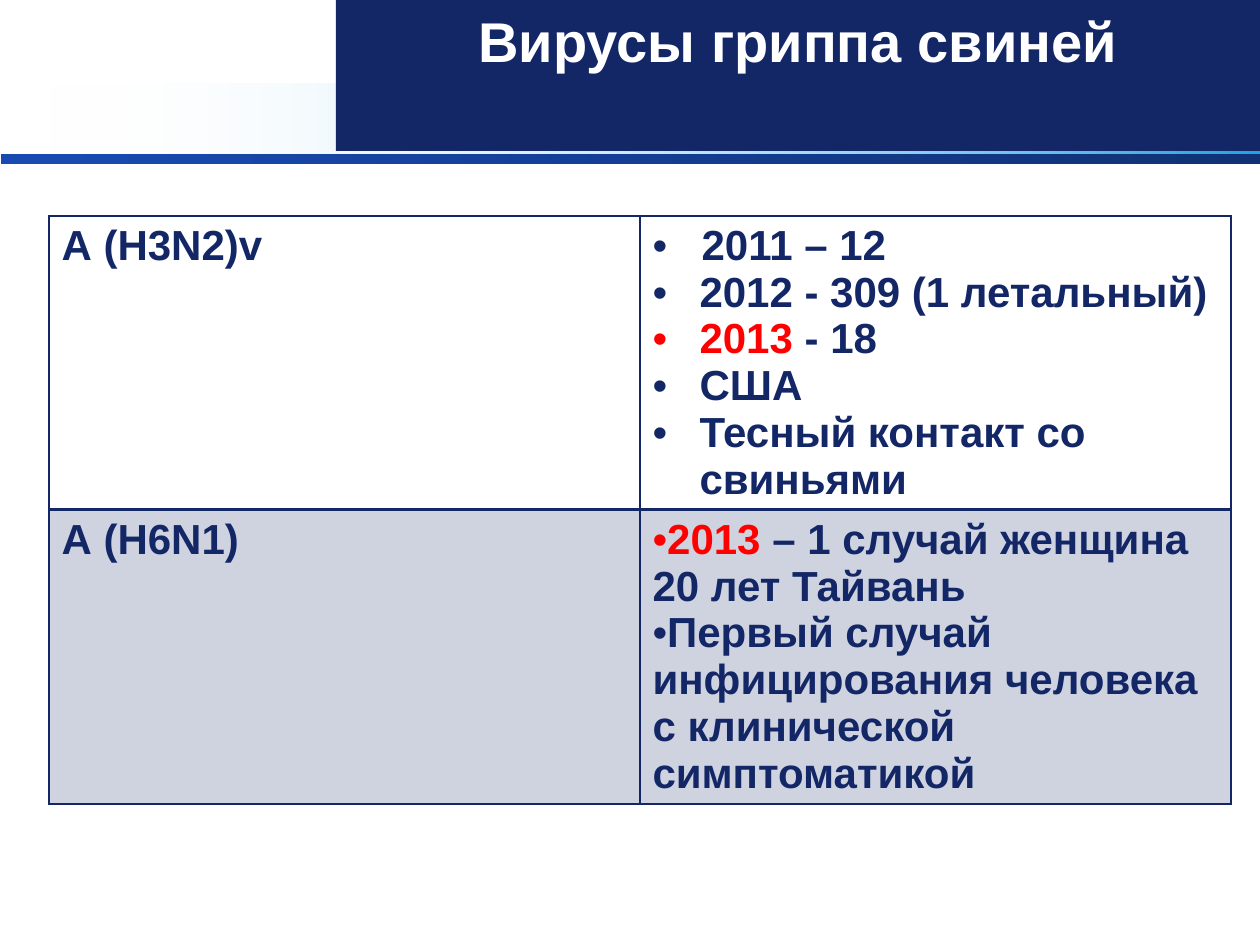
from pptx import Presentation
from pptx.dml.color import RGBColor
from pptx.enum.shapes import MSO_SHAPE
from pptx.enum.text import MSO_ANCHOR, PP_ALIGN
from pptx.oxml import parse_xml
from pptx.oxml.ns import nsdecls, qn
from pptx.util import Emu, Pt

SCALE = 914400 / 126
COLORS = {
    "navy": "132767", "red": "FF0000", "white": "FFFFFF",
    "sky": "22A2E2", "blue": "184BB2", "deep": "103175",
}


def px(size):
    return Emu(round(size * SCALE))


def add_run(para, text, color, size):
    run = para.add_run()
    run.text = text
    run.font.name = "Arial"
    run.font.size = Pt(size)
    run.font.bold = True
    run.font.color.rgb = RGBColor.from_string(COLORS[color])


deck = Presentation()
deck.slide_width = px(1260)
deck.slide_height = px(945)
slide = deck.slides.add_slide(deck.slide_layouts[6])

bars = [
    ((42, 84, 1218, 73), ("white", "sky"), True),
    ((1, 154, 1259, 10), ("blue", "deep"), False),
]
for box, pair, fade in bars:
    bar = slide.shapes.add_shape(MSO_SHAPE.RECTANGLE, *map(px, box))
    bar.shadow.inherit = False
    bar.line.fill.background()
    bar.fill.gradient()
    bar.fill.gradient_angle = 0
    for stop, color, spot in zip(bar.fill.gradient_stops, pair, (0, 1)):
        stop.color.rgb = RGBColor.from_string(COLORS[color])
        stop.position = spot
    if fade:
        first = next(bar.element.spPr.iter(qn("a:srgbClr")))
        first.append(parse_xml(f'<a:alpha {nsdecls("a")} val="0"/>'))

title = slide.shapes.add_shape(MSO_SHAPE.RECTANGLE, px(336), 0, px(924), px(151))
title.shadow.inherit = False
title.line.fill.background()
title.fill.solid()
title.fill.fore_color.rgb = RGBColor.from_string(COLORS["navy"])
title.text_frame.word_wrap = True
title.text_frame.vertical_anchor = MSO_ANCHOR.TOP
head = title.text_frame.paragraphs[0]
head.alignment = PP_ALIGN.CENTER
add_run(head, "Вирусы гриппа свиней", "white", 32)

rows = [
    ("А (H3N2)v", [
        (49, [("2011 – 12", "navy")]),
        (47, [("2012 - 309 (1 летальный)", "navy")]),
        (47, [("2013 ", "red"), ("- 18", "navy")]),
        (47, [("США", "navy")]),
        (47, [("Тесный контакт со свиньями", "navy")]),
    ]),
    ("А (H6N1)", [
        (0, [("2013", "red"), (" – 1 случай женщина 20 лет Тайвань", "navy")]),
        (0, [("Первый случай инфицирования человека с клинической симптоматикой", "navy")]),
    ]),
]
frame = slide.shapes.add_table(2, 2, px(49), px(216), px(1182), px(588))
table = frame.table
table.first_row = False
table.horz_banding = False

for row, (virus, facts) in enumerate(rows):
    add_run(table.cell(row, 0).text_frame.paragraphs[0], virus, "navy", 24)
    text = table.cell(row, 1).text_frame
    for num, (dent, runs) in enumerate(facts):
        para = text.add_paragraph() if num else text.paragraphs[0]
        props = para._p.get_or_add_pPr()
        props.set("marL", str(px(dent)))
        props.set("indent", str(-px(dent)))
        props.append(parse_xml(f'<a:buFont {nsdecls("a")} typeface="Arial"/>'))
        props.append(parse_xml(f'<a:buChar {nsdecls("a")} char="•"/>'))
        for words, color in runs:
            add_run(para, words, color, 24)
    for col in range(2):
        cell = table.cell(row, col)
        props = cell._tc.get_or_add_tcPr()
        inner = "B" if row == 0 else "T"
        for side in "LRTB":
            width = Pt(2 if side == inner else 1)
            props.append(parse_xml(
                f'<a:ln{side} {nsdecls("a")} w="{width}"><a:solidFill>'
                f'<a:srgbClr val="{COLORS["navy"]}"/></a:solidFill></a:ln{side}>'))
        if row == 0:
            cell.fill.background()
        else:
            cell.fill.solid()
            cell.fill.fore_color.rgb = RGBColor.from_string(COLORS["navy"])
            tint = props.find(qn("a:solidFill")).find(qn("a:srgbClr"))
            tint.append(parse_xml(f'<a:alpha {nsdecls("a")} val="20000"/>'))

deck.save("out.pptx")
